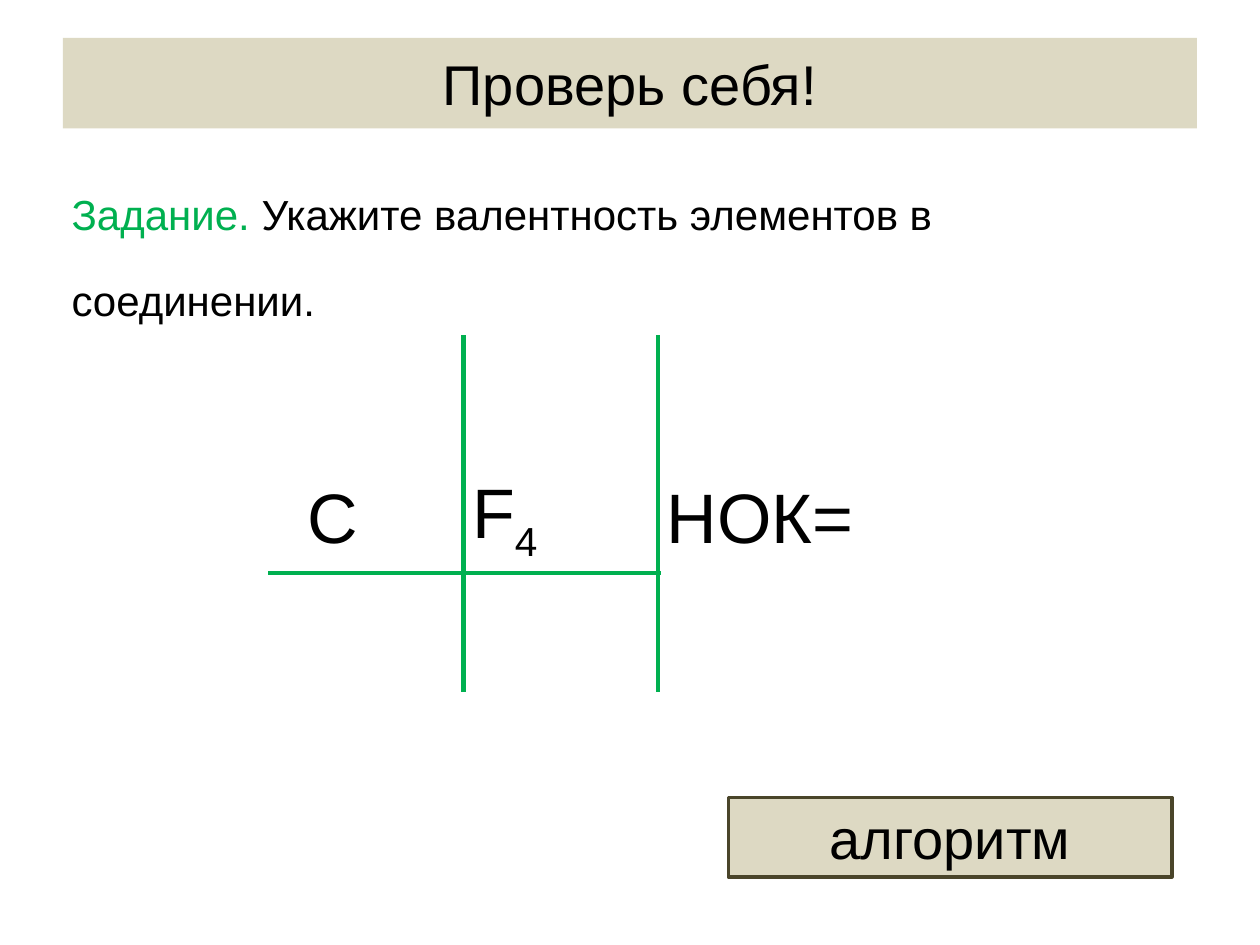
from lxml.etree import SubElement
from pptx import Presentation
from pptx.dml.color import RGBColor
from pptx.enum.shapes import MSO_SHAPE
from pptx.enum.text import MSO_ANCHOR, PP_ALIGN
from pptx.oxml.ns import qn
from pptx.util import Inches, Pt

SAND = RGBColor(0xDD, 0xD9, 0xC3)
BROWN = RGBColor(0x4A, 0x45, 0x2A)
GREEN = RGBColor(0x00, 0xB0, 0x50)
BLACK = RGBColor(0x00, 0x00, 0x00)
FONT = "Arial"
WIDTH, HEIGHT = 10, 7.5
ROWS, COLUMNS = 3, 3
COLUMN_SHARES = (0.27, 0.27, 0.46)


def share_box(left, top, width, height):
    """Turn shares of the slide's size into a box of lengths."""
    return (Inches(left * WIDTH), Inches(top * HEIGHT),
            Inches(width * WIDTH), Inches(height * HEIGHT))


def add_run(paragraph, text, size, color=BLACK):
    """Append one formatted run to a paragraph."""
    run = paragraph.add_run()
    run.text = text
    run.font.name = FONT
    run.font.size = Pt(size)
    run.font.color.rgb = color
    return run


def add_panel(slide, box, text, line_color=None):
    """Place a sand rectangle with centred text in the box."""
    shape = slide.shapes.add_shape(MSO_SHAPE.RECTANGLE, *box)
    shape.shadow.inherit = False
    shape.fill.solid()
    shape.fill.fore_color.rgb = SAND
    if line_color is None:
        shape.line.fill.background()
    else:
        shape.line.color.rgb = line_color
        shape.line.width = Pt(2)
    shape.text_frame.vertical_anchor = MSO_ANCHOR.MIDDLE
    paragraph = shape.text_frame.paragraphs[0]
    paragraph.alignment = PP_ALIGN.CENTER
    add_run(paragraph, text, 32)


def add_task(slide, box):
    """Place the wording of the task in the box."""
    frame = slide.shapes.add_textbox(*box).text_frame
    frame.word_wrap = True
    frame.margin_right = Inches(0.2)
    paragraph = frame.paragraphs[0]
    paragraph.line_spacing = 1.7
    add_run(paragraph, "Задание. ", 24, GREEN)
    add_run(paragraph, "Укажите валентность элементов в соединении.", 24)


def set_borders(cell, sides):
    """Draw the given sides of a cell in green and hide the others."""
    properties = cell._tc.get_or_add_tcPr()
    for position, side in enumerate("LRTB"):
        line = SubElement(properties, qn(f"a:ln{side}"), w=str(Pt(3)))
        if side in sides:
            fill = SubElement(line, qn("a:solidFill"))
            SubElement(fill, qn("a:srgbClr"), val=str(GREEN))
        else:
            SubElement(line, qn("a:noFill"))
        properties.insert(position, line)


def border_sides(row, column):
    """Return the sides of a cell that belong to the valency cross."""
    sides = ("L" if column > 0 else "") + ("R" if column < COLUMNS - 1 else "")
    if column < COLUMNS - 1:
        sides += {1: "B", 2: "T"}.get(row, "")
    return sides


def start_cell(cell):
    """Centre a cell vertically and return its paragraph."""
    cell.vertical_anchor = MSO_ANCHOR.MIDDLE
    cell.margin_left = cell.margin_right = Inches(0.07)
    cell.margin_top = cell.margin_bottom = 0
    paragraph = cell.text_frame.paragraphs[0]
    paragraph.line_spacing = 1.15
    return paragraph


def add_valency_table(slide, box):
    """Place the valency scheme in the box."""
    table = slide.shapes.add_table(ROWS, COLUMNS, *box).table
    table.first_row = table.horz_banding = False
    for column, share in zip(table.columns, COLUMN_SHARES):
        column.width = int(box[2] * share)
    for row in range(ROWS):
        for column in range(COLUMNS):
            cell = table.cell(row, column)
            cell.fill.background()
            set_borders(cell, border_sides(row, column))
    table.cell(0, 2).merge(table.cell(2, 2))

    carbon = start_cell(table.cell(1, 0))
    carbon.alignment = PP_ALIGN.RIGHT
    table.cell(1, 0).margin_right = Inches(0.84)
    add_run(carbon, "С", 40)
    fluorine = start_cell(table.cell(1, 1))
    add_run(fluorine, "F", 40)
    index = add_run(fluorine, "4", 40)
    index.font._element.set("baseline", "-25000")
    add_run(start_cell(table.cell(0, 2)), "НОК=", 40)


def main():
    """Build and save the slide."""
    presentation = Presentation()
    presentation.slide_width = Inches(WIDTH)
    presentation.slide_height = Inches(HEIGHT)
    slide = presentation.slides.add_slide(presentation.slide_layouts[6])
    add_panel(slide, share_box(0.05, 0.04, 0.9, 0.096), "Проверь себя!")
    add_task(slide, share_box(0.047, 0.156, 0.9, 0.208))
    add_valency_table(slide, share_box(0.213, 0.355, 0.573, 0.377))
    add_panel(slide, share_box(0.578, 0.844, 0.352, 0.084), "алгоритм", BROWN)
    presentation.save("out.pptx")


if __name__ == "__main__":
    main()
